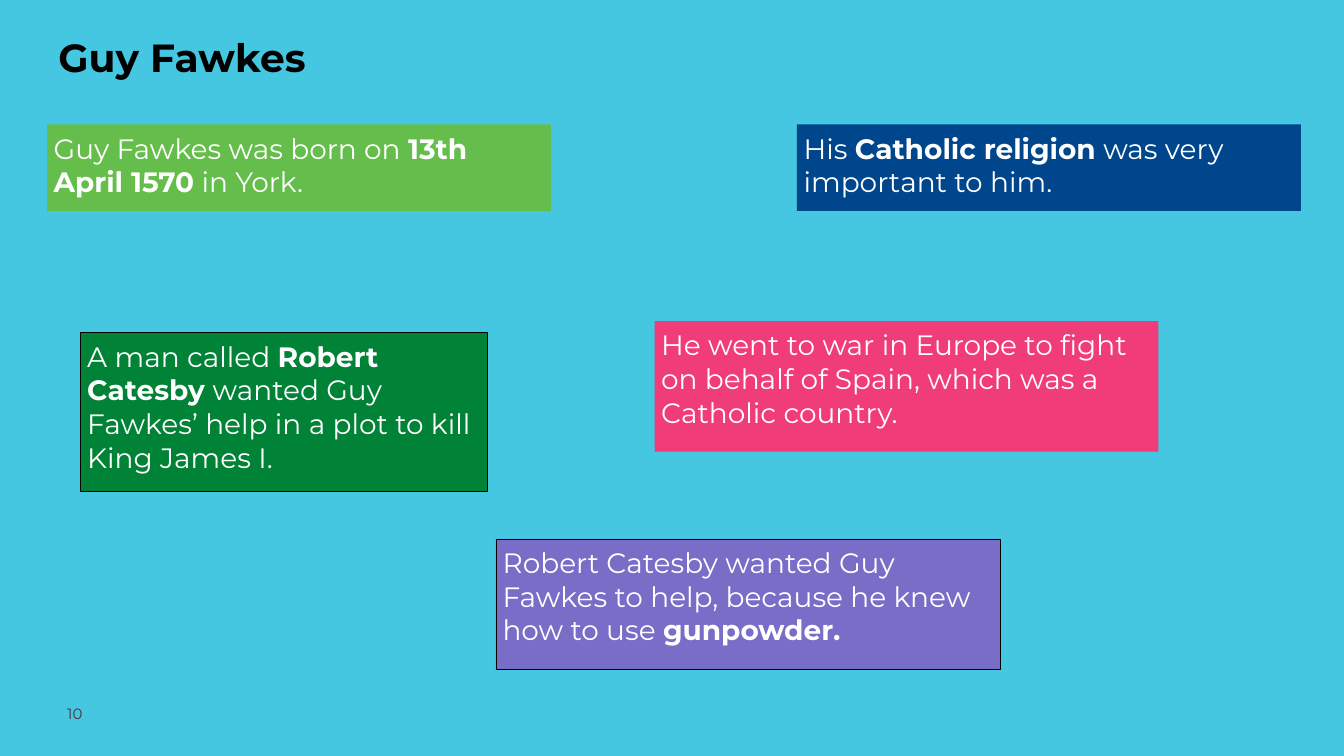
from dataclasses import dataclass

import pptx
import pptx.dml.color
import pptx.enum.shapes
import pptx.enum.text
import pptx.util

RGBColor = pptx.dml.color.RGBColor

EMU_PER_PX = 9144  # 100 px to the inch
FONT = "Montserrat"
BODY_SIZE = 30
INSET = 10
WIDE = 750  # width shared by most fact boxes

SKY = RGBColor(0x46, 0xC7, 0xE1)
BLACK = RGBColor(0x00, 0x00, 0x00)
WHITE = RGBColor(0xFF, 0xFF, 0xFF)
PLUM = RGBColor(0x4B, 0x32, 0x41)
LIME = RGBColor(0x65, 0xBE, 0x4B)
NAVY = RGBColor(0x00, 0x46, 0x8C)
PINK = RGBColor(0xF0, 0x3C, 0x78)
GREEN = RGBColor(0x00, 0x82, 0x37)
VIOLET = RGBColor(0x78, 0x6E, 0xC8)


@dataclass
class Span:
    text: str
    bold: bool = False


@dataclass
class Fact:
    left: int
    top: int
    width: int
    height: int
    fill: RGBColor
    spans: list[Span]
    outlined: bool = False


FACTS = [
    Fact(70, 185, WIDE, 129, LIME,
         [Span("Guy Fawkes was born on "), Span("13th April 1570", True), Span(" in York.")]),
    Fact(1186, 185, WIDE, 129, NAVY,
         [Span("His "), Span("Catholic religion", True), Span(" was very important to him.")]),
    Fact(974, 478, WIDE, 194, PINK,
         [Span("He went to war in Europe to fight on behalf of Spain, "
               "which was a Catholic country.")]),
    Fact(120, 495, 606, 236, GREEN,
         [Span("A man called "), Span("Robert Catesby ", True),
          Span("wanted Guy Fawkes’ help in a plot to kill King James I.")], outlined=True),
    Fact(738, 802, WIDE, 194, VIOLET,
         [Span("Robert Catesby wanted Guy Fawkes to help, because he knew how to use "),
          Span("gunpowder.", True)], outlined=True),
]


def px(length: int) -> pptx.util.Emu:
    return pptx.util.Emu(length * EMU_PER_PX)


def write(box, spans: list[Span], size: int, color: RGBColor, inset: int) -> None:
    """Fill a box with one left-aligned paragraph of spans."""
    frame = box.text_frame
    frame.word_wrap = True
    frame.vertical_anchor = pptx.enum.text.MSO_ANCHOR.TOP
    frame.margin_left = frame.margin_right = px(inset)
    frame.margin_top = frame.margin_bottom = px(inset)
    para = frame.paragraphs[0]
    para.alignment = pptx.enum.text.PP_ALIGN.LEFT
    para.font.name = FONT
    para.font.size = pptx.util.Pt(size)
    para.font.color.rgb = color
    for span in spans:
        run = para.add_run()
        run.text = span.text
        if span.bold:
            run.font.bold = True


def add_label(page, left: int, top: int, width: int, height: int,
              span: Span, size: int, color: RGBColor, inset: int) -> None:
    box = page.shapes.add_textbox(px(left), px(top), px(width), px(height))
    write(box, [span], size, color, inset)


def add_fact(page, fact: Fact) -> None:
    box = page.shapes.add_shape(
        pptx.enum.shapes.MSO_SHAPE.RECTANGLE,
        px(fact.left), px(fact.top), px(fact.width), px(fact.height))
    box.shadow.inherit = False
    box.fill.solid()
    box.fill.fore_color.rgb = fact.fill
    if fact.outlined:
        box.line.color.rgb = BLACK
        box.line.width = pptx.util.Pt(0.75)
    else:
        box.line.fill.background()
    write(box, fact.spans, BODY_SIZE, WHITE, INSET)


def main() -> None:
    deck = pptx.Presentation()
    deck.slide_width, deck.slide_height = px(2000), px(1125)
    page = deck.slides.add_slide(deck.slide_layouts[6])

    # Background
    page.background.fill.solid()
    page.background.fill.fore_color.rgb = SKY

    # Page number and title
    add_label(page, 100, 1048, 157, 39, Span("10"), 16, PLUM, 0)
    add_label(page, 77, 40, 576, 96, Span("Guy Fawkes", True), 42, BLACK, INSET)

    # Facts
    for fact in FACTS:
        add_fact(page, fact)

    deck.save("out.pptx")


if __name__ == "__main__":
    main()
